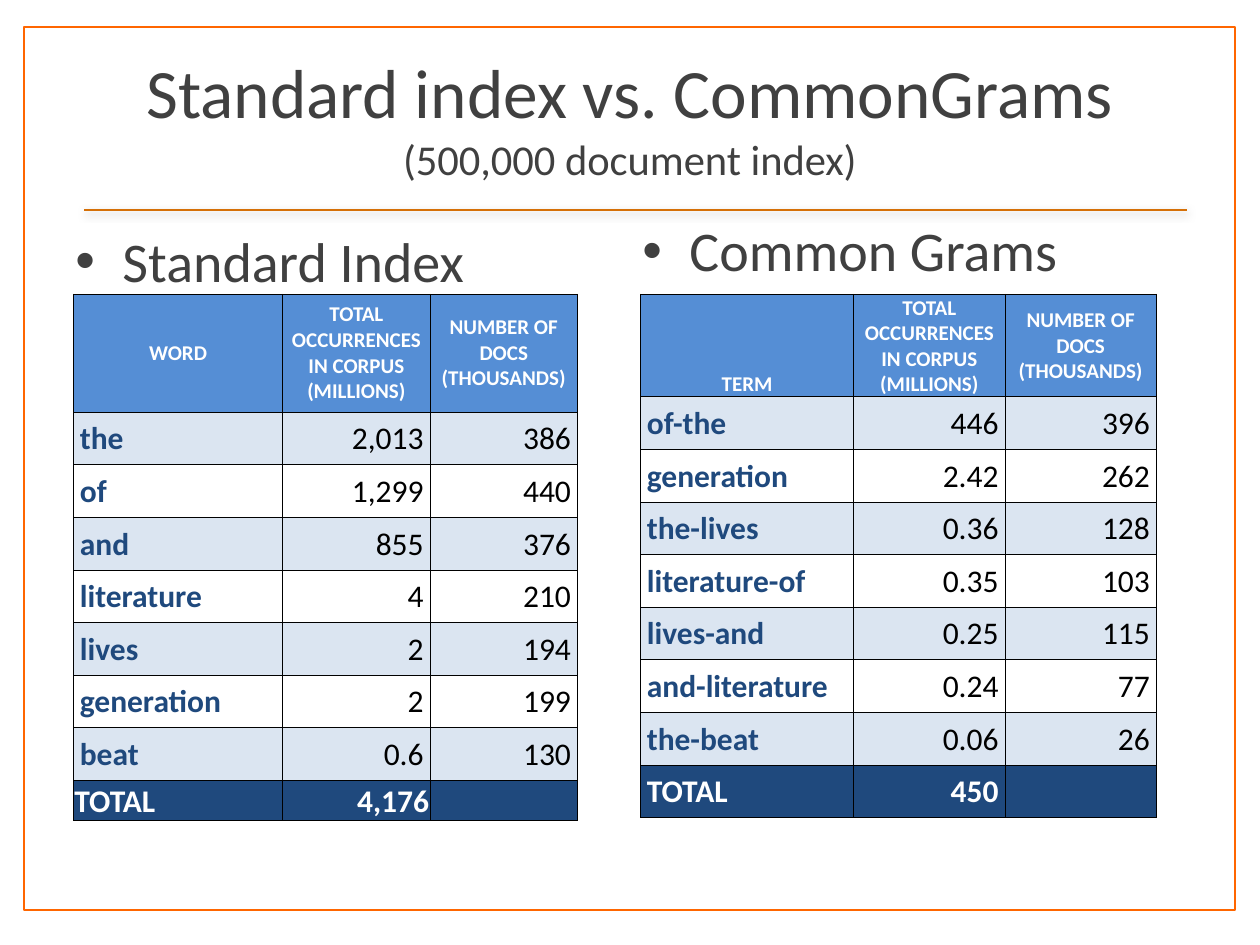
from dataclasses import dataclass

from lxml.etree import SubElement
from pptx import Presentation
from pptx.dml.color import RGBColor
from pptx.enum.shapes import MSO_CONNECTOR, MSO_SHAPE
from pptx.enum.text import MSO_ANCHOR, PP_ALIGN
from pptx.oxml import parse_xml
from pptx.oxml.ns import nsdecls, qn
from pptx.util import Cm, Pt


@dataclass(frozen=True)
class Theme:
    font: str = "Calibri"
    frame: str = "FF6600"
    rule: str = "D57007"
    text: str = "404040"
    white: str = "FFFFFF"
    black: str = "000000"
    header: str = "558ED5"
    band: str = "DBE5F1"
    navy: str = "1F497D"
    title_size: float = 39.6
    subtitle_size: float = 24.3
    heading_size: float = 32
    header_size: float = 12
    cell_size: float = 18


THEME = Theme()
EVEN_INSET = (0.13, 0.13, 0.13, 0.13)
TIGHT_INSET = (0.02, 0.02, 0.02, 0)
SIDES = ("margin_left", "margin_top", "margin_right", "margin_bottom")
COUNT_HEADERS = ("TOTAL OCCURRENCES IN CORPUS (MILLIONS)",
                 "NUMBER OF DOCS (THOUSANDS)")

STANDARD = {
    "rows": [
        ("WORD", *COUNT_HEADERS),
        ("the", "2,013", "386"),
        ("of", "1,299", "440"),
        ("and", "855", "376"),
        ("literature", "4", "210"),
        ("lives", "2", "194"),
        ("generation", "2", "199"),
        ("beat", "0.6", "130"),
        ("TOTAL", "4,176", ""),
    ],
    "widths": (4.22, 2.97, 2.97),
    "header_height": 2.38,
    "total_height": 0.81,
    "header_inset": EVEN_INSET,
    "total_inset": TIGHT_INSET,
    "key_anchor": MSO_ANCHOR.MIDDLE,
}
COMMON_GRAMS = {
    "rows": [
        ("TERM", *COUNT_HEADERS),
        ("of-the", "446", "396"),
        ("generation", "2.42", "262"),
        ("the-lives", "0.36", "128"),
        ("literature-of", "0.35", "103"),
        ("lives-and", "0.25", "115"),
        ("and-literature", "0.24", "77"),
        ("the-beat", "0.06", "26"),
        ("TOTAL", "450", ""),
    ],
    "widths": (4.3, 3.05, 3.05),
    "header_height": 2.07,
    "total_height": 1.06,
    "header_inset": TIGHT_INSET,
    "total_inset": EVEN_INSET,
    "key_anchor": MSO_ANCHOR.BOTTOM,
}
ROW_HEIGHT = 1.06


def set_values(target, values):
    for name, value in values.items():
        setattr(target, name, value)


def style_font(font, size, color, bold=False):
    set_values(font, {"name": THEME.font, "size": Pt(size), "bold": bold})
    font.color.rgb = RGBColor.from_string(color)


def add_frame(slide, left, top, width, height):
    frame = slide.shapes.add_shape(MSO_SHAPE.RECTANGLE, Cm(left), Cm(top),
                                   Cm(width), Cm(height))
    frame.shadow.inherit = False
    frame.fill.solid()
    frame.fill.fore_color.rgb = RGBColor.from_string(THEME.white)
    frame.line.color.rgb = RGBColor.from_string(THEME.frame)
    frame.line.width = Pt(1)


def add_rule(slide, left, top, width):
    """Horizontal line with a soft shadow below it."""
    rule = slide.shapes.add_connector(MSO_CONNECTOR.STRAIGHT, Cm(left), Cm(top),
                                      Cm(left + width), Cm(top))
    rule.line.color.rgb = RGBColor.from_string(THEME.rule)
    rule.line.width = Pt(1)
    rule._element.spPr.append(parse_xml(
        f'<a:effectLst {nsdecls("a")}>'
        f'<a:outerShdw blurRad="{Pt(5)}" dist="{Pt(1.8)}" dir="5400000" rotWithShape="0">'
        f'<a:srgbClr val="{THEME.black}"><a:alpha val="35000"/></a:srgbClr>'
        '</a:outerShdw></a:effectLst>'))


def add_text_frame(slide, left, top, width, height):
    box = slide.shapes.add_textbox(Cm(left), Cm(top), Cm(width), Cm(height))
    box.text_frame.word_wrap = True
    return box.text_frame


def add_title(slide, left, top, width, height, title, subtitle):
    frame = add_text_frame(slide, left, top, width, height)
    frame.vertical_anchor = MSO_ANCHOR.MIDDLE
    paragraph = frame.paragraphs[0]
    paragraph.alignment = PP_ALIGN.CENTER
    for text, size in ((title + "\v", THEME.title_size),
                       (subtitle, THEME.subtitle_size)):
        if text.endswith("\v"):
            text = text[:-1]
        else:
            paragraph.add_line_break()
        run = paragraph.add_run()
        run.text = text
        style_font(run.font, size, THEME.text)


def add_heading(slide, left, top, width, height, text):
    paragraph = add_text_frame(slide, left, top, width, height).paragraphs[0]
    properties = paragraph._p.get_or_add_pPr()
    for name, value in {"marL": Cm(0.95), "indent": Cm(-0.95)}.items():
        properties.set(name, str(value))
    SubElement(properties, qn("a:buFont"), typeface="Arial")
    SubElement(properties, qn("a:buChar"), char="•")
    run = paragraph.add_run()
    run.text = text
    style_font(run.font, THEME.heading_size, THEME.text)


def add_borders(cell):
    properties = cell._tc.get_or_add_tcPr()
    for side in ("lnL", "lnR", "lnT", "lnB"):
        line = SubElement(properties, qn(f"a:{side}"), w=str(Pt(0.5)))
        fill = SubElement(line, qn("a:solidFill"))
        SubElement(fill, qn("a:srgbClr"), val=THEME.black)


def fill_cell(cell, text, fill, inset, anchor, align, size, color, bold):
    add_borders(cell)
    cell.fill.solid()
    cell.fill.fore_color.rgb = RGBColor.from_string(fill)
    set_values(cell, dict(zip(SIDES, map(Cm, inset))))
    cell.vertical_anchor = anchor
    paragraph = cell.text_frame.paragraphs[0]
    paragraph.alignment = align
    if text:
        run = paragraph.add_run()
        run.text = text
        style_font(run.font, size, color, bold)


def add_index_table(slide, left, top, index):
    rows, widths = index["rows"], index["widths"]
    last = len(rows) - 1
    heights = [index["header_height"], *[ROW_HEIGHT] * (last - 1), index["total_height"]]
    table = slide.shapes.add_table(len(rows), len(widths), Cm(left), Cm(top),
                                   Cm(sum(widths)), Cm(sum(heights))).table
    set_values(table, {"first_row": False, "horz_banding": False})
    for column, width in zip(table.columns, widths):
        column.width = Cm(width)
    for r, (values, height) in enumerate(zip(rows, heights)):
        table.rows[r].height = Cm(height)
        for c, text in enumerate(values):
            look = {"inset": EVEN_INSET, "anchor": MSO_ANCHOR.BOTTOM,
                    "align": PP_ALIGN.RIGHT if c else PP_ALIGN.LEFT,
                    "size": THEME.cell_size, "bold": c == 0,
                    "color": THEME.black if c else THEME.navy,
                    "fill": THEME.band if r % 2 else THEME.white}
            if r == 0:
                look |= {"inset": index["header_inset"], "align": PP_ALIGN.CENTER,
                         "anchor": MSO_ANCHOR.MIDDLE if c else index["key_anchor"],
                         "size": THEME.header_size, "bold": True,
                         "color": THEME.white, "fill": THEME.header}
            elif r == last:
                look |= {"inset": index["total_inset"], "bold": True,
                         "color": THEME.white, "fill": THEME.navy}
            fill_cell(table.cell(r, c), text, **look)


def main():
    deck = Presentation()
    set_values(deck, {"slide_width": Cm(25.4), "slide_height": Cm(19.05)})
    slide = deck.slides.add_slide(deck.slide_layouts[6])
    add_frame(slide, 0.49, 0.55, 24.41, 17.8)
    add_rule(slide, 1.7, 4.23, 22.23)
    add_title(slide, 1.27, 0.76, 22.86, 3.18,
              "Standard index vs. CommonGrams", "(500,000 document index)")
    add_heading(slide, 1.27, 4.45, 22.86, 13.59, "Standard Index")
    add_heading(slide, 12.7, 4.23, 11.23, 1.78, "Common Grams")
    for left, index in ((1.48, STANDARD), (12.91, COMMON_GRAMS)):
        add_index_table(slide, left, 5.93, index)
    deck.save("out.pptx")


if __name__ == "__main__":
    main()
